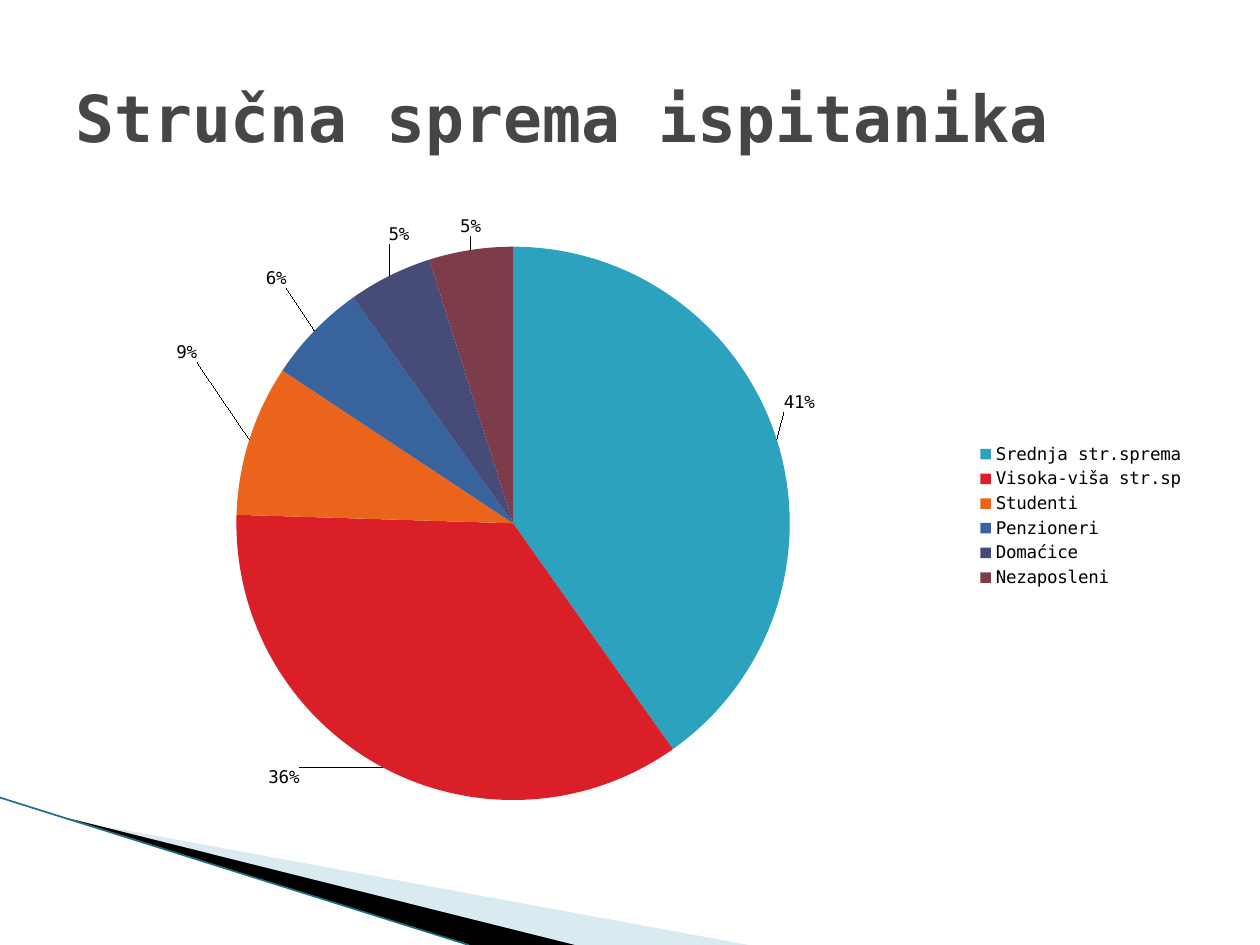
import pptx
import pptx.chart.data
import pptx.dml.color
import pptx.enum.chart
import pptx.enum.shapes
import pptx.enum.text
import pptx.oxml
import pptx.oxml.ns
import pptx.util

WIDTH, HEIGHT = 10, 7.5
FONT = "DejaVu Sans Mono"
TITLE_BOX = (0.05, 0.04, 0.9, 1 / 6)
CHART_BOX = (0.05, 0.216, 0.9, 0.66)
DECORATION_BOX = (0, 0.844, 0.6, 0.156)
PIE_AREA = (0.153, 0.068, 0.488, 0.888)
SLICES = [
    ("Srednja str.sprema", 0.41, "2DA2BF", (0, -0.04)),
    ("Visoka-viša str.sp", 0.36, "DA1F28", (-0.07, -0.01)),
    ("Studenti", 0.09, "EB641B", (-0.04, -0.12)),
    ("Penzioneri", 0.06, "39639D", (-0.02, -0.06)),
    ("Domaćice", 0.05, "474B78", (0.02, -0.04)),
    ("Nezaposleni", 0.05, "7D3C4A", (0.01, -0.01)),
]
WEDGES = [
    ("A0CBDC", 40, [(0.09, 0.15), (0.99, 1), (0.76, 1)]),
    ("000000", 100, [(0.09, 0.14), (0.76, 1), (0.62, 1)]),
]


def color(value):
    """Turn a hex string into a colour."""
    return pptx.dml.color.RGBColor.from_string(value)


def apply(target, values):
    """Set each attribute named in a dict of format values."""
    for name, value in values.items():
        setattr(target, name, value)


def place(box):
    """Convert shares of the slide into left, top, width and height."""
    sizes = (WIDTH, HEIGHT, WIDTH, HEIGHT)
    return [pptx.util.Inches(share * size) for share, size in zip(box, sizes)]


def element(tag, content="", **attributes):
    """Build one element of the drawing or chart markup."""
    values = " ".join(f'{name}="{value}"' for name, value in attributes.items())
    prefix = tag.split(":")[0]
    namespace = pptx.oxml.ns.nsdecls(prefix)
    return pptx.oxml.parse_xml(f"<{tag} {namespace} {values}>{content}</{tag}>")


def manual_layout(values, inner=False):
    """Build a chart layout from shares of the chart's size."""
    target = '<c:layoutTarget val="inner"/>' if inner else ""
    modes = '<c:xMode val="edge"/><c:yMode val="edge"/>' if inner else ""
    shares = "".join(f'<c:{name} val="{value}"/>' for name, value in zip("xywh", values))
    return element("c:layout", f"<c:manualLayout>{target}{modes}{shares}</c:manualLayout>")


def add_decoration(slide, box):
    """Draw the corner wedges and their edge line."""
    left, top, width, height = place(box)

    def point(x, y):
        return left + x * width, top + y * height

    for fill, opacity, corners in WEDGES:
        points = [point(*corner) for corner in corners]
        builder = slide.shapes.build_freeform(*points[0], scale=1.0)
        builder.add_line_segments(points[1:], close=True)
        wedge = builder.convert_to_shape()
        wedge.shadow.inherit = False
        wedge.line.fill.background()
        wedge.fill.solid()
        wedge.fill.fore_color.rgb = color(fill)
        if opacity < 100:
            for fill_color in wedge._element.spPr.xpath("a:solidFill/a:srgbClr"):
                fill_color.append(element("a:alpha", val=opacity * 1000))

    start, end = point(0, 0), point(0.62, 1)
    edge = slide.shapes.add_connector(
        pptx.enum.shapes.MSO_CONNECTOR.STRAIGHT, *map(int, start + end))
    edge.line.color.rgb = color("1B7186")
    edge.line.width = pptx.util.Pt(0.95)
    edge._element.spPr.append(element("a:effectLst"))


def add_title(slide, box, text):
    """Place the slide heading."""
    frame = slide.shapes.add_textbox(*place(box)).text_frame
    apply(frame, {"word_wrap": True,
                  "vertical_anchor": pptx.enum.text.MSO_ANCHOR.MIDDLE})
    paragraph = frame.paragraphs[0]
    paragraph.text = text
    apply(paragraph.font, {"name": FONT, "size": pptx.util.Pt(37), "bold": True})
    paragraph.font.color.rgb = color("464646")


def add_pie(slide, box):
    """Place the pie chart with its labels and legend."""
    data = pptx.chart.data.CategoryChartData(number_format="0%")
    data.categories = [name for name, *_ in SLICES]
    data.add_series("Series 1", [value for _, value, *_ in SLICES])
    chart = slide.shapes.add_chart(
        pptx.enum.chart.XL_CHART_TYPE.PIE, *place(box), data).chart
    apply(chart, {"has_title": False, "has_legend": True})
    apply(chart.font, {"name": FONT, "size": pptx.util.Pt(10)})
    chart.font.color.rgb = color("000000")
    apply(chart.legend, {"position": pptx.enum.chart.XL_LEGEND_POSITION.RIGHT,
                         "include_in_layout": False})
    plot = chart.plots[0]
    plot.vary_by_categories = True
    series = plot.series[0]
    outside = pptx.enum.chart.XL_LABEL_POSITION.OUTSIDE_END
    apply(series.data_labels, {"show_value": True, "number_format": "0%",
                               "number_format_is_linked": False, "position": outside})
    for index, (_, _, fill, _) in enumerate(SLICES):
        point = series.points[index]
        point.format.fill.solid()
        point.format.fill.fore_color.rgb = color(fill)
        point.data_label.position = outside
    labels = series._element.xpath("c:dLbls/c:dLbl")
    for label, (*_, offset) in zip(labels, SLICES):
        label[0].addnext(manual_layout(offset))
    label_group = series._element.xpath("c:dLbls")[0]
    for leader in label_group.xpath("c:showLeaderLines"):
        label_group.remove(leader)
    label_group.append(element("c:showLeaderLines", val=1))
    plot_area = chart._chartSpace.xpath("c:chart/c:plotArea")[0]
    for layout in plot_area.xpath("c:layout"):
        plot_area.remove(layout)
    plot_area.insert(0, manual_layout(PIE_AREA, inner=True))


def main():
    """Build and save the presentation."""
    presentation = pptx.Presentation()
    apply(presentation, {"slide_width": pptx.util.Inches(WIDTH),
                         "slide_height": pptx.util.Inches(HEIGHT)})
    slide = presentation.slides.add_slide(presentation.slide_layouts[6])
    add_decoration(slide, DECORATION_BOX)
    add_title(slide, TITLE_BOX, "Stručna sprema ispitanika")
    add_pie(slide, CHART_BOX)
    presentation.save("out.pptx")


if __name__ == "__main__":
    main()
